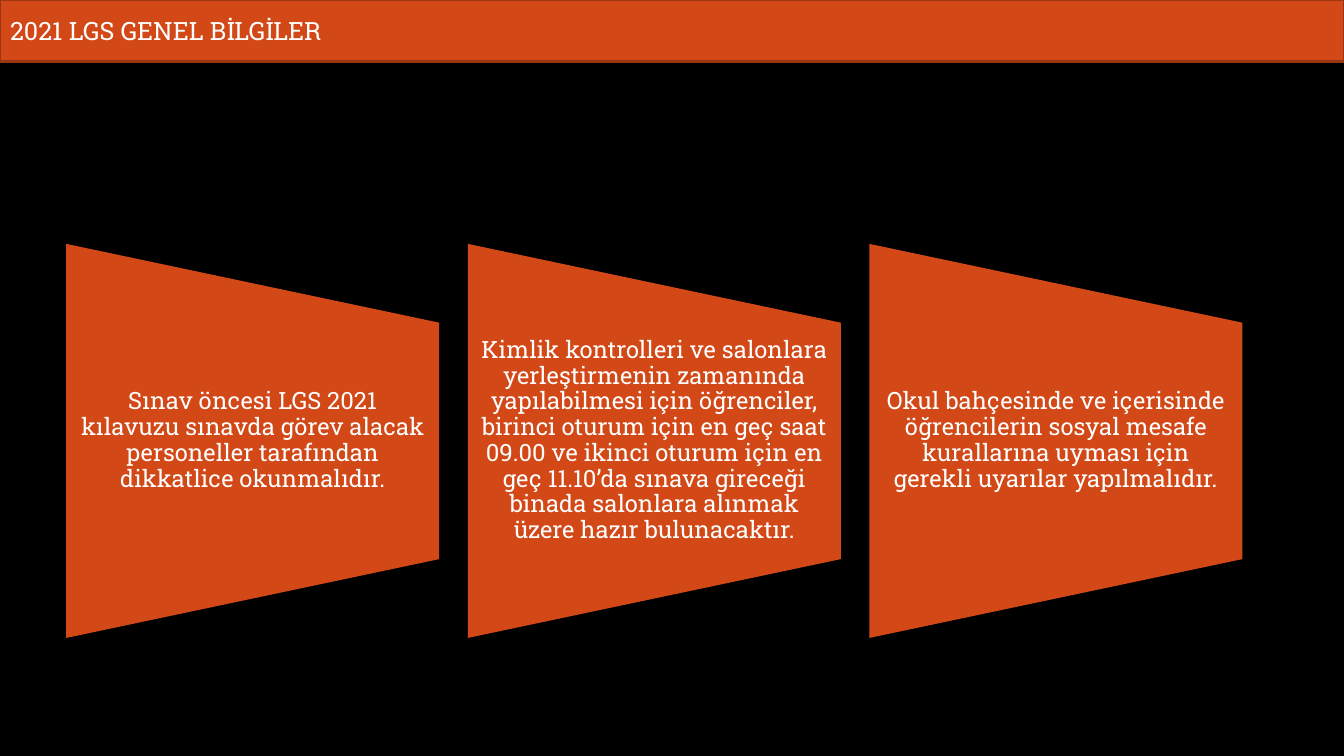
from dataclasses import dataclass

from pptx import Presentation
from pptx.dml.color import RGBColor
from pptx.enum.shapes import MSO_SHAPE
from pptx.enum.text import MSO_ANCHOR, MSO_AUTO_SIZE, PP_ALIGN
from pptx.util import Cm, Pt


@dataclass(frozen=True)
class Theme:
    font: str = "Roboto Slab"
    background: RGBColor = RGBColor(0x00, 0x00, 0x00)
    accent: RGBColor = RGBColor(0xD3, 0x48, 0x17)
    outline: RGBColor = RGBColor(0x9C, 0x35, 0x11)
    text: RGBColor = RGBColor(0xFF, 0xFF, 0xFF)
    heading_size: Pt = Pt(18)
    rule_size: Pt = Pt(17)


theme = Theme()


def apply_format(target, values):
    for attribute, value in values.items():
        setattr(target, attribute, value)


def write_text(shape, text, size, frame_format, paragraph_format):
    frame = shape.text_frame
    frame.text = text
    apply_format(frame, {
        "word_wrap": True,
        "auto_size": MSO_AUTO_SIZE.NONE,
        "vertical_anchor": MSO_ANCHOR.MIDDLE,
        **frame_format,
    })
    paragraph = frame.paragraphs[0]
    apply_format(paragraph, paragraph_format)
    font = paragraph.runs[0].font
    apply_format(font, {"name": theme.font, "size": size})
    font.color.rgb = theme.text


# Slide and background
presentation = Presentation()
apply_format(presentation, {"slide_width": Cm(33.87), "slide_height": Cm(19.05)})
slide = presentation.slides.add_slide(presentation.slide_layouts[5])
slide.background.fill.solid()
slide.background.fill.fore_color.rgb = theme.background

# Heading band
heading = slide.shapes.title
apply_format(heading, {
    "left": Cm(0), "top": Cm(0),
    "width": presentation.slide_width, "height": Cm(1.55),
})
heading.fill.solid()
heading.fill.fore_color.rgb = theme.accent
heading.line.color.rgb = theme.outline
heading.line.width = Pt(1.5)
write_text(heading, "2021 LGS GENEL BİLGİLER", theme.heading_size,
           {}, {"alignment": PP_ALIGN.LEFT})

# Exam rules: one sideways trapezoid each, with upright text on top
exam_rules = [
    "Sınav öncesi LGS 2021 kılavuzu sınavda görev alacak personeller "
    "tarafından dikkatlice okunmalıdır.",
    "Kimlik kontrolleri ve salonlara yerleştirmenin zamanında yapılabilmesi "
    "için öğrenciler, birinci oturum için en geç saat 09.00 ve ikinci oturum "
    "için en geç 11.10’da sınava gireceği binada salonlara alınmak üzere "
    "hazır bulunacaktır.",
    "Okul bahçesinde ve içerisinde öğrencilerin sosyal mesafe kurallarına "
    "uyması için gerekli uyarılar yapılmalıdır.",
]
first_center, center_y, column_step = Cm(6.37), Cm(11.11), Cm(10.12)
panel_width, panel_height = Cm(9.4), Cm(9.93)
rule_height = Cm(5.97)

for column, exam_rule in enumerate(exam_rules):
    center_x = first_center + column * column_step

    # Width and height swap because the panel is turned on its side
    panel = slide.shapes.add_shape(
        MSO_SHAPE.FLOWCHART_MANUAL_OPERATION,
        center_x - panel_height // 2, center_y - panel_width // 2,
        panel_height, panel_width)
    panel.rotation = 270
    panel.shadow.inherit = False
    panel.fill.solid()
    panel.fill.fore_color.rgb = theme.accent
    panel.line.fill.background()

    rule_text = slide.shapes.add_textbox(
        center_x - panel_width // 2, center_y - rule_height // 2,
        panel_width, rule_height)
    write_text(
        rule_text, exam_rule, theme.rule_size,
        {"margin_left": Cm(0.3), "margin_right": Cm(0.3),
         "margin_top": Cm(0), "margin_bottom": Cm(0)},
        {"alignment": PP_ALIGN.CENTER, "line_spacing": 0.9, "space_after": Pt(6)})

presentation.save("out.pptx")
